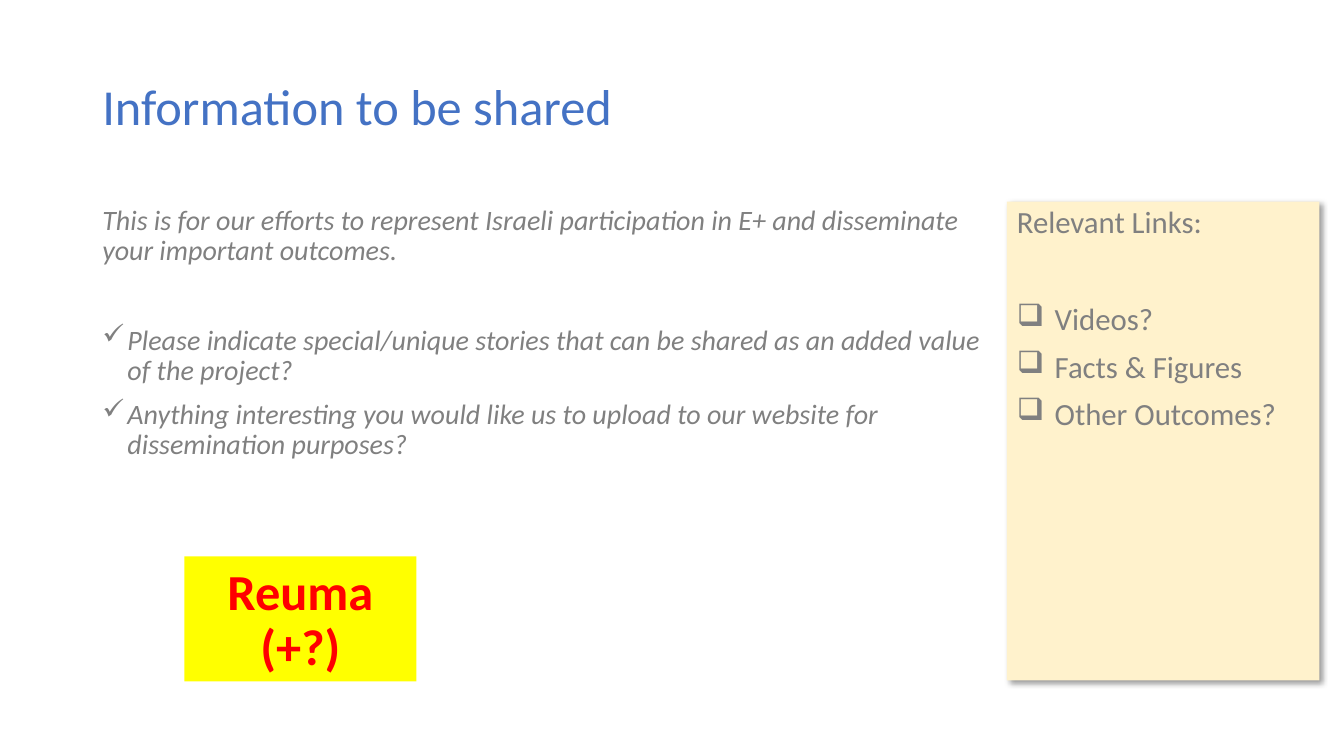
from dataclasses import dataclass
from typing import Optional

from lxml.etree import SubElement
from pptx import Presentation
from pptx.dml.color import RGBColor
from pptx.enum.shapes import MSO_SHAPE
from pptx.enum.text import MSO_ANCHOR as Anchor, PP_ALIGN as Align
from pptx.oxml.ns import qn
from pptx.util import Pt

BLUE = RGBColor(0x44, 0x72, 0xC4)
GRAY = RGBColor(0x80, 0x80, 0x80)
CREAM = RGBColor(0xFF, 0xF2, 0xCC)
YELLOW = RGBColor(0xFF, 0xFF, 0x00)
RED = RGBColor(0xFF, 0x00, 0x00)
BLACK = RGBColor(0x00, 0x00, 0x00)


@dataclass
class Line:
    text: str
    before: float = 0
    bullet: str = ""


@dataclass
class Panel:
    left: float
    top: float
    width: float
    height: float
    lines: list[Line]
    font: dict
    fill: Optional[RGBColor] = None
    indent: float = 0
    align: Align = Align.LEFT
    anchor: Anchor = Anchor.TOP
    shadow: bool = False


PANELS = [
    Panel(66, 26, 828, 104.4, [Line("Information to be shared")],
          {"size": Pt(36), "color": BLUE}, anchor=Anchor.MIDDLE),
    Panel(66, 144, 645, 342.7, [
        Line("This is for our efforts to represent Israeli participation in E+ "
             "and disseminate your important outcomes."),
        Line("Please indicate special/unique stories that can be shared as an "
             "added value of the project?", 42, "✓"),
        Line("Anything interesting you would like us to upload to our website "
             "for dissemination purposes?", 10, "✓"),
    ], {"size": Pt(20), "color": GRAY, "italic": True}, indent=18),
    Panel(719.3, 144, 223.2, 342, [
        Line("Relevant Links:"),
        Line("Videos?", 46, "❑"),
        Line("Facts & Figures", 10, "❑"),
        Line("Other Outcomes?", 10, "❑"),
    ], {"size": Pt(22), "color": GRAY}, fill=CREAM, indent=27, shadow=True),
    Panel(131.8, 397.4, 165.6, 89.3, [Line("Reuma (+?)")],
          {"size": Pt(36), "color": RED, "bold": True}, fill=YELLOW,
          align=Align.CENTER, anchor=Anchor.BOTTOM),
]


def add_bullet(paragraph, character: str, indent: float) -> None:
    """Give the paragraph a bullet with a hanging indent."""
    properties = paragraph._p.get_or_add_pPr()
    properties.set("marL", str(Pt(indent)))
    properties.set("indent", str(-Pt(indent)))
    SubElement(properties, qn("a:buChar"), char=character)


def add_shadow(shape) -> None:
    """Fill the shape's empty effect list with a soft shadow to the lower right."""
    effects = shape._element.spPr.find(qn("a:effectLst"))
    outer = SubElement(effects, qn("a:outerShdw"), blurRad=str(Pt(4)),
                       dist=str(Pt(3)), dir="2700000", algn="tl", rotWithShape="0")
    color = SubElement(outer, qn("a:srgbClr"), val=str(BLACK))
    SubElement(color, qn("a:alpha"), val="40000")


def add_line(paragraph, line: Line, panel: Panel) -> None:
    if line.bullet:
        add_bullet(paragraph, line.bullet, panel.indent)
    layout = {"alignment": panel.align, "line_spacing": 0.9,
              "space_before": Pt(line.before)}
    for name, value in layout.items():
        setattr(paragraph, name, value)
    run = paragraph.add_run()
    run.text = line.text
    for name, value in {"name": "Calibri", **panel.font}.items():
        if name == "color":
            run.font.color.rgb = value
        else:
            setattr(run.font, name, value)


def add_panel(slide, panel: Panel) -> None:
    bounds = [Pt(n) for n in (panel.left, panel.top, panel.width, panel.height)]
    if panel.fill is None:
        shape = slide.shapes.add_textbox(*bounds)
    else:
        shape = slide.shapes.add_shape(MSO_SHAPE.RECTANGLE, *bounds)
        shape.fill.solid()
        shape.fill.fore_color.rgb = panel.fill
        shape.line.fill.background()
        shape.shadow.inherit = False
    if panel.shadow:
        add_shadow(shape)
    frame = shape.text_frame
    frame.word_wrap = True
    frame.vertical_anchor = panel.anchor
    for index, line in enumerate(panel.lines):
        paragraph = frame.add_paragraph() if index else frame.paragraphs[0]
        add_line(paragraph, line, panel)


def main() -> None:
    presentation = Presentation()
    presentation.slide_width = Pt(960)
    presentation.slide_height = Pt(540)
    slide = presentation.slides.add_slide(presentation.slide_layouts[6])
    for panel in PANELS:
        add_panel(slide, panel)
    presentation.save("out.pptx")


if __name__ == "__main__":
    main()
